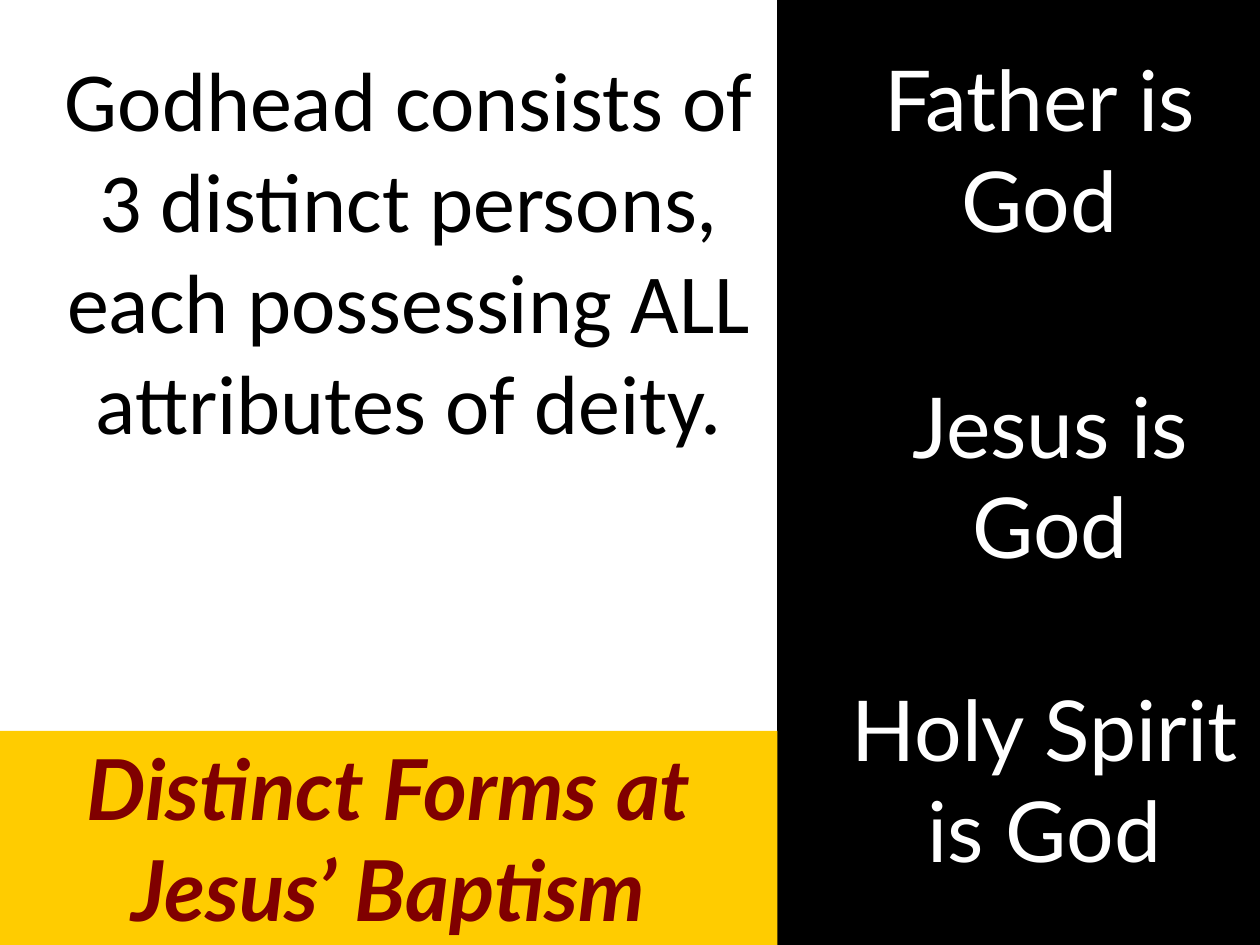
from pptx import Presentation
from pptx.dml.color import RGBColor
from pptx.enum.shapes import MSO_SHAPE
from pptx.enum.text import MSO_ANCHOR, PP_ALIGN
from pptx.util import Inches, Pt

BLACK = RGBColor(0x00, 0x00, 0x00)
WHITE = RGBColor(0xFF, 0xFF, 0xFF)
GOLD = RGBColor(0xFF, 0xCC, 0x00)
MAROON = RGBColor(0x80, 0x00, 0x00)

PAGE_WIDTH, PAGE_HEIGHT = 10, 7.5
SPLIT = 6.17
BANNER_HEIGHT = 1.7


class SlideBuilder:
    """Holds the text style and the slide being filled."""

    text_size = Pt(48)

    def __init__(self, page):
        self.page = page

    def set_text(self, shape, text, font_name, color, emphasis=False):
        frame = shape.text_frame
        frame.word_wrap = True
        frame.vertical_anchor = MSO_ANCHOR.TOP
        para = frame.paragraphs[0]
        para.text = text
        para.alignment = PP_ALIGN.CENTER
        para.font.name = font_name
        para.font.size = self.text_size
        para.font.color.rgb = color
        para.font.bold = para.font.italic = emphasis

    def panel(self, left, top, width, height, fill, line=None):
        shape = self.page.shapes.add_shape(
            MSO_SHAPE.RECTANGLE, Inches(left), Inches(top), Inches(width), Inches(height))
        shape.shadow.inherit = False
        shape.fill.solid()
        shape.fill.fore_color.rgb = fill
        if line is None:
            shape.line.fill.background()
        else:
            shape.line.color.rgb = line
            shape.line.width = Pt(0.75)
        return shape

    def text_box(self, left, top, width, height, text, font_name, color):
        box = self.page.shapes.add_textbox(
            Inches(left), Inches(top), Inches(width), Inches(height))
        self.set_text(box, text, font_name, color)


def main():
    deck = Presentation()
    deck.slide_width = Inches(PAGE_WIDTH)
    deck.slide_height = Inches(PAGE_HEIGHT)
    blank_layout = deck.slide_layouts[6]
    builder = SlideBuilder(deck.slides.add_slide(blank_layout))

    builder.panel(SPLIT, 0, PAGE_WIDTH - SPLIT, PAGE_HEIGHT, BLACK, line=BLACK)
    builder.text_box(
        0.33, 0.33, 5.83, 3.33,
        "Godhead consists of 3 distinct persons, each possessing ALL attributes of deity.",
        "Calibri", BLACK)

    persons = [
        (6.5, 0.33, "Father is God"),
        (6.67, 2.92, "Jesus is God"),
        (6.58, 5.33, "Holy Spirit is God"),
    ]
    for left, top, text in persons:
        builder.text_box(left, top, PAGE_WIDTH - left, 1.7, text, "Lato", WHITE)

    banner = builder.panel(0, PAGE_HEIGHT - BANNER_HEIGHT, SPLIT, BANNER_HEIGHT, GOLD)
    builder.set_text(banner, "Distinct Forms at Jesus’ Baptism", "Lato", MAROON, emphasis=True)

    deck.save("out.pptx")


if __name__ == "__main__":
    main()
